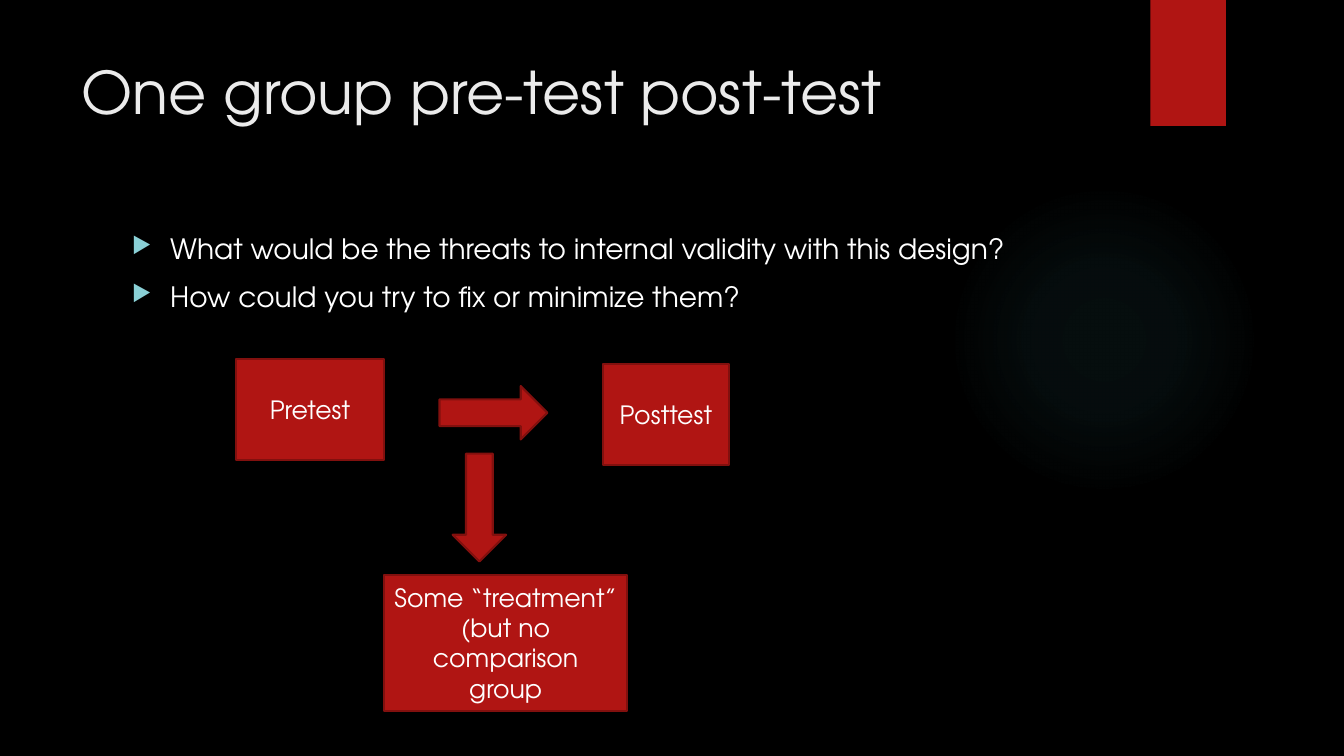
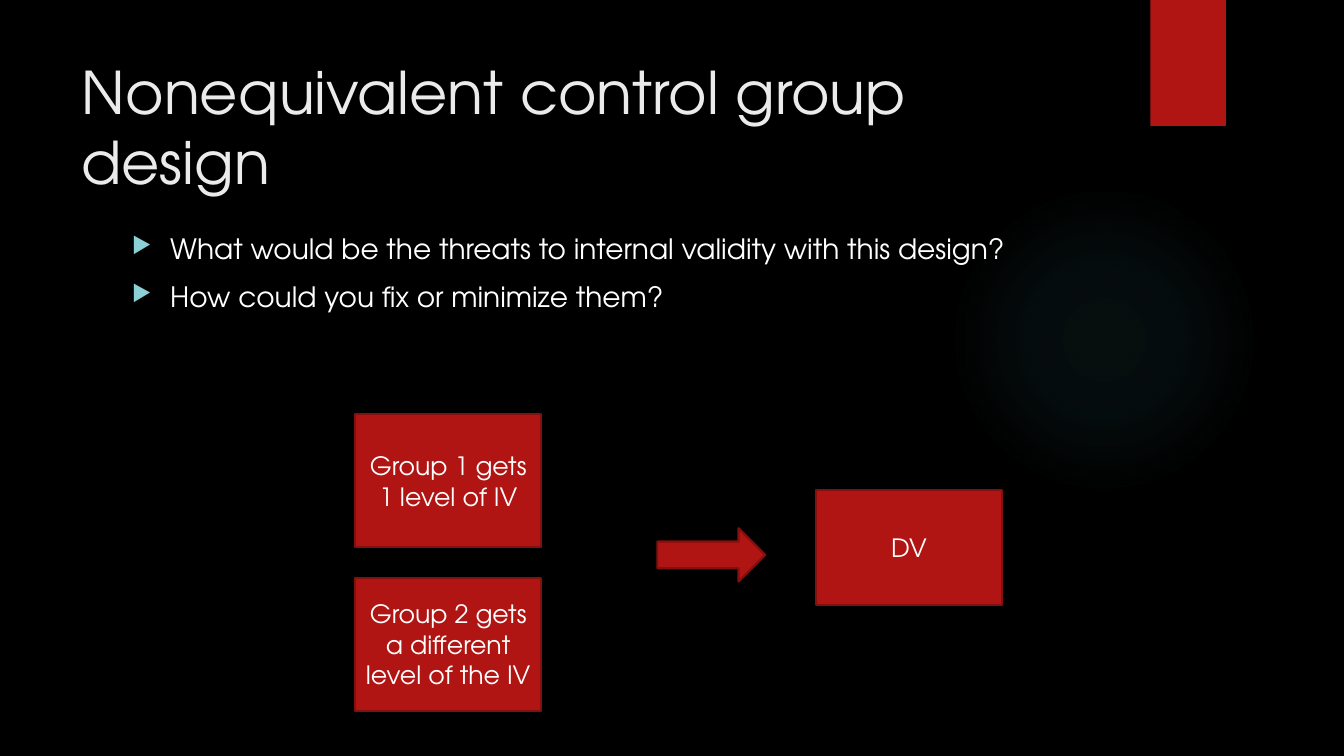
"""Build two slides on quasi-experimental designs."""
from lxml import etree
from pptx import Presentation
from pptx.dml.color import RGBColor
from pptx.enum.shapes import MSO_SHAPE
from pptx.enum.text import MSO_ANCHOR, PP_ALIGN
from pptx.oxml import parse_xml
from pptx.oxml.ns import qn
from pptx.util import Inches, Pt

RECTANGLE, OVAL = MSO_SHAPE.RECTANGLE, MSO_SHAPE.OVAL
RIGHT_ARROW, DOWN_ARROW = MSO_SHAPE.RIGHT_ARROW, MSO_SHAPE.DOWN_ARROW
TOP, MIDDLE = MSO_ANCHOR.TOP, MSO_ANCHOR.MIDDLE
LEFT, CENTER = PP_ALIGN.LEFT, PP_ALIGN.CENTER

BLACK = RGBColor(0x00, 0x00, 0x00)
WHITE = RGBColor(0xFF, 0xFF, 0xFF)
TITLE_GREY = RGBColor(0xEB, 0xEB, 0xEB)
RED = RGBColor(0xB0, 0x15, 0x13)
DARK_RED = RGBColor(0x82, 0x10, 0x0E)
BULLET_TEAL = RGBColor(0x8A, 0xD0, 0xD6)
GLOW_TEAL = RGBColor(0x50, 0xB9, 0xC1)
FONT = "TeX Gyre Adventor"

GLOW_AREA = (9.41, 1.83, 3.08, 3.08)
GLOW_STOPS = [(0, 7), (36, 6), (69, 0)]
BAND_AREA = (11.41, 0, 0.75, 1.25)
TITLE_AREA = (0.71, 0.5, 10.29, 1.53)
BODY_AREA = (1.21, 2.25, 9.78, 4.59)
ARROW_LENGTH, ARROW_WIDTH = 1.07, 0.53
GROUP_LEFT, GROUP_TOP, GROUP_STEP = 3.52, 4.11, 1.62
GROUP_WIDTH, GROUP_HEIGHT = 1.85, 1.32

THREATS = "What would be the threats to internal validity with this design?"
GROUPS = ["Group 1 gets 1 level of IV", "Group 2 gets a different level of the IV"]

SLIDES = [
    {
        "title": "One group pre-test post-test",
        "bullets": [THREATS, "How could you try to fix or minimize them?"],
        "boxes": [
            ("Pretest", (2.34, 3.56, 1.47, 1)),
            ("Posttest", (5.98, 3.61, 1.25, 1)),
            ("Some “treatment” (but no comparison group", (3.81, 5.7, 2.41, 1.35)),
        ],
        "arrows": [
            (RIGHT_ARROW, (4.36, 3.83, ARROW_LENGTH, ARROW_WIDTH)),
            (DOWN_ARROW, (4.49, 4.5, ARROW_WIDTH, ARROW_LENGTH)),
        ],
    },
    {
        "title": "Nonequivalent control group design",
        "bullets": [THREATS, "How could you fix or minimize them?"],
        "boxes": [
            (text, (GROUP_LEFT, GROUP_TOP + row * GROUP_STEP, GROUP_WIDTH, GROUP_HEIGHT))
            for row, text in enumerate(GROUPS)
        ] + [("DV", (8.09, 4.86, GROUP_WIDTH, 1.14))],
        "arrows": [(RIGHT_ARROW, (6.52, 5.24, ARROW_LENGTH, ARROW_WIDTH))],
    },
]


def place(area):
    return [Inches(length) for length in area]


def add_bullet(para):
    properties = para._p.get_or_add_pPr()
    properties.set("marL", str(Inches(0.38)))
    properties.set("indent", str(-Inches(0.38)))
    color = etree.SubElement(properties, qn("a:buClr"))
    etree.SubElement(color, qn("a:srgbClr"), val=str(BULLET_TEAL))
    etree.SubElement(properties, qn("a:buSzPct"), val="80000")
    etree.SubElement(properties, qn("a:buChar"), char="▶")


def write(shape, texts, size=18, color=WHITE, align=LEFT, anchor=TOP, bullets=False, gap=0):
    frame = shape.text_frame
    frame.word_wrap = True
    frame.vertical_anchor = anchor
    for index, text in enumerate(texts):
        para = frame.add_paragraph() if index else frame.paragraphs[0]
        if bullets:
            add_bullet(para)
        para.alignment = align
        if index:
            para.space_before = Pt(gap)
        span = para.add_run()
        span.text = text
        span.font.name = FONT
        span.font.size = Pt(size)
        span.font.color.rgb = color


def add_red_shape(page, kind, area, outlined=True):
    shape = page.shapes.add_shape(kind, *place(area))
    shape.shadow.inherit = False
    shape.fill.solid()
    shape.fill.fore_color.rgb = RED
    if outlined:
        shape.line.color.rgb = DARK_RED
        shape.line.width = Pt(1.5)
    else:
        shape.line.fill.background()
    return shape


def add_glow(page):
    glow = page.shapes.add_shape(OVAL, *place(GLOW_AREA))
    stops = "".join(
        f'<a:gs pos="{position * 1000}"><a:srgbClr val="{GLOW_TEAL}">'
        f'<a:alpha val="{opacity * 1000}"/></a:srgbClr></a:gs>'
        for position, opacity in GLOW_STOPS
    )
    glow._element.spPr.append(parse_xml(
        '<a:gradFill xmlns:a="http://schemas.openxmlformats.org/drawingml/2006/main">'
        f'<a:gsLst>{stops}</a:gsLst><a:path path="circle">'
        '<a:fillToRect l="50000" t="50000" r="50000" b="50000"/></a:path></a:gradFill>'
    ))
    glow.line.fill.background()
    glow.shadow.inherit = False


def add_page(deck, content):
    page = deck.slides.add_slide(deck.slide_layouts[6])
    page.background.fill.solid()
    page.background.fill.fore_color.rgb = BLACK
    add_glow(page)
    add_red_shape(page, RECTANGLE, BAND_AREA, outlined=False)
    title = page.shapes.add_textbox(*place(TITLE_AREA))
    write(title, [content["title"]], size=42, color=TITLE_GREY)
    body = page.shapes.add_textbox(*place(BODY_AREA))
    write(body, content["bullets"], size=20, bullets=True, gap=10)
    for text, area in content["boxes"]:
        box = add_red_shape(page, RECTANGLE, area)
        write(box, [text], align=CENTER, anchor=MIDDLE)
    for kind, area in content["arrows"]:
        add_red_shape(page, kind, area)


def main():
    deck = Presentation()
    deck.slide_width, deck.slide_height = Inches(13.33), Inches(7.5)
    for content in SLIDES:
        add_page(deck, content)
    deck.save("out.pptx")


if __name__ == "__main__":
    main()
